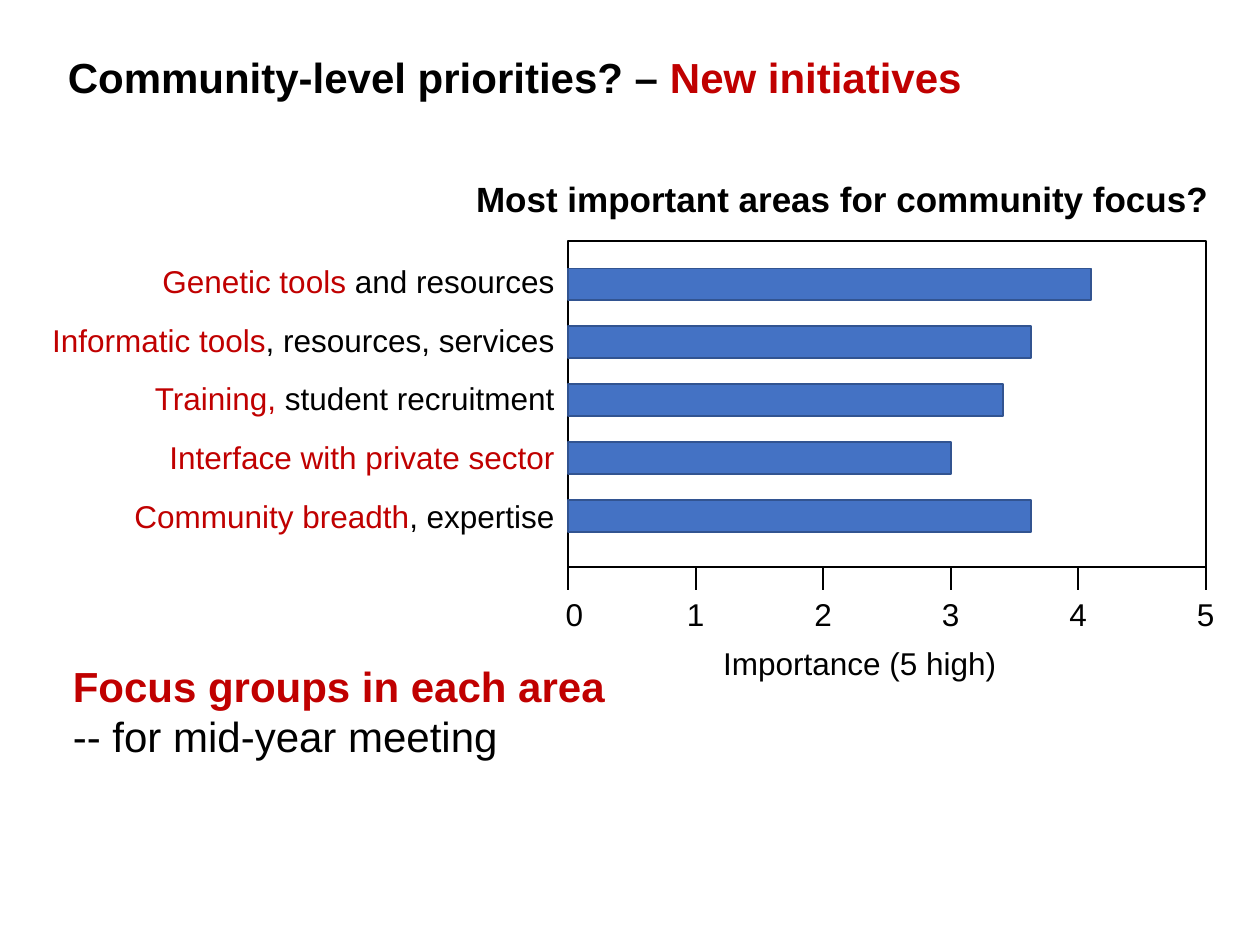
from lxml.etree import SubElement
from pptx import Presentation
from pptx.dml.color import RGBColor
from pptx.enum.shapes import MSO_CONNECTOR, MSO_SHAPE
from pptx.enum.text import MSO_AUTO_SIZE, PP_ALIGN
from pptx.oxml.ns import qn
from pptx.util import Inches, Pt

BLACK, RED, BLUE, DARK_BLUE = "000000", "C00000", "4472C4", "325491"

# Each paragraph is a list of (text, colour, bold) runs
TITLE = [[("Community-level priorities? – ", BLACK, True), ("New initiatives", RED, True)]]
HEADING = [[("Most important areas for community focus?", BLACK, True)]]
AXIS_TITLE = [[("Importance (5 high)", BLACK, False)]]
FOLLOW_UP = [
    [("Focus groups in each area", RED, True)],
    [("-- for mid-year meeting", BLACK, False)],
]
# Highlighted words, remaining words, importance
AREAS = [
    ("Genetic tools ", "and resources", 4.1),
    ("Informatic tools", ", resources, services", 3.63),
    ("Training,", " student recruitment", 3.41),
    ("Interface with private sector", "", 3),
    ("Community breadth", ", expertise", 3.63),
]

AXIS_MAX = 5
PLOT_LEFT, PLOT_TOP, PLOT_WIDTH, PLOT_HEIGHT = 4.51, 1.91, 5.06, 2.59
UNIT = PLOT_WIDTH / AXIS_MAX
BAR_TOP, BAR_STEP, BAR_HEIGHT = 2.13, 0.46, 0.25
TICK_LENGTH = 0.18
SCALE_LEFT, TEXT_INSET = 4.39, 0.1


def colour(value):
    return RGBColor.from_string(value)


def add_text(slide, at, paragraphs, size, align=PP_ALIGN.LEFT, space_after=0, wrap=False):
    box = slide.shapes.add_textbox(*map(Inches, at))
    frame = box.text_frame
    frame.word_wrap = wrap
    frame.auto_size = MSO_AUTO_SIZE.SHAPE_TO_FIT_TEXT
    for index, runs in enumerate(paragraphs):
        paragraph = frame.add_paragraph() if index else frame.paragraphs[0]
        paragraph.alignment = align
        paragraph.space_after = Pt(space_after)
        paragraph.font.name = "Arial"
        paragraph.font.size = Pt(size)
        for text, run_colour, bold in runs:
            run = paragraph.add_run()
            run.text = text
            run.font.bold = bold
            run.font.color.rgb = colour(run_colour)
    return frame


def add_rectangle(slide, at, line, fill=None):
    rectangle = slide.shapes.add_shape(MSO_SHAPE.RECTANGLE, *map(Inches, at))
    rectangle.shadow.inherit = False
    if fill:
        rectangle.fill.solid()
        rectangle.fill.fore_color.rgb = colour(fill)
    else:
        rectangle.fill.background()
    rectangle.line.color.rgb = colour(line)
    rectangle.line.width = Pt(1)


def add_tick(slide, x, y):
    tick = slide.shapes.add_connector(
        MSO_CONNECTOR.STRAIGHT, Inches(x), Inches(y), Inches(x), Inches(y + TICK_LENGTH))
    tick.line.color.rgb = colour(BLACK)
    tick.line.width = Pt(1)
    SubElement(tick._element.spPr, qn("a:effectLst"))


def add_scale(slide):
    """Number the axis in one line, with a centred tab stop under each tick."""
    numbers = "\t".join(str(value) for value in range(AXIS_MAX + 1))
    frame = add_text(slide, (SCALE_LEFT, 4.67, 5.43, 0.4), [[(numbers, BLACK, False)]], 18, wrap=True)
    properties = frame.paragraphs[0]._p.get_or_add_pPr()
    tabs = properties.makeelement(qn("a:tabLst"), {})
    properties.find(qn("a:defRPr")).addprevious(tabs)
    for value in range(1, AXIS_MAX + 1):
        stop = PLOT_LEFT + value * UNIT - SCALE_LEFT - TEXT_INSET
        SubElement(tabs, qn("a:tab"), pos=str(Inches(stop)), algn="ctr")


def main():
    presentation = Presentation()
    presentation.slide_width, presentation.slide_height = Inches(10), Inches(7.5)
    slide = presentation.slides.add_slide(presentation.slide_layouts[6])

    add_text(slide, (0.44, 0.36, 7.47, 0.5), TITLE, 24)
    add_text(slide, (3.68, 1.36, 6.06, 0.44), HEADING, 20)
    labels = [
        [(text, shade, False) for text, shade in ((key, RED), (rest, BLACK)) if text]
        for key, rest, _ in AREAS
    ]
    add_text(slide, (0.27, 2.03, 4.23, 2.76), labels, 18, PP_ALIGN.RIGHT, space_after=12)

    add_rectangle(slide, (PLOT_LEFT, PLOT_TOP, PLOT_WIDTH, PLOT_HEIGHT), BLACK)
    for row, (_, _, importance) in enumerate(AREAS):
        bar = (PLOT_LEFT, BAR_TOP + row * BAR_STEP, importance * UNIT, BAR_HEIGHT)
        add_rectangle(slide, bar, DARK_BLUE, BLUE)
    for value in range(AXIS_MAX + 1):
        add_tick(slide, PLOT_LEFT + value * UNIT, PLOT_TOP + PLOT_HEIGHT)
    add_scale(slide)
    add_text(slide, (5.64, 5.06, 2.39, 0.49), AXIS_TITLE, 18)
    add_text(slide, (0.48, 5.19, 4.46, 0.91), FOLLOW_UP, 24)

    presentation.save("out.pptx")


if __name__ == "__main__":
    main()
